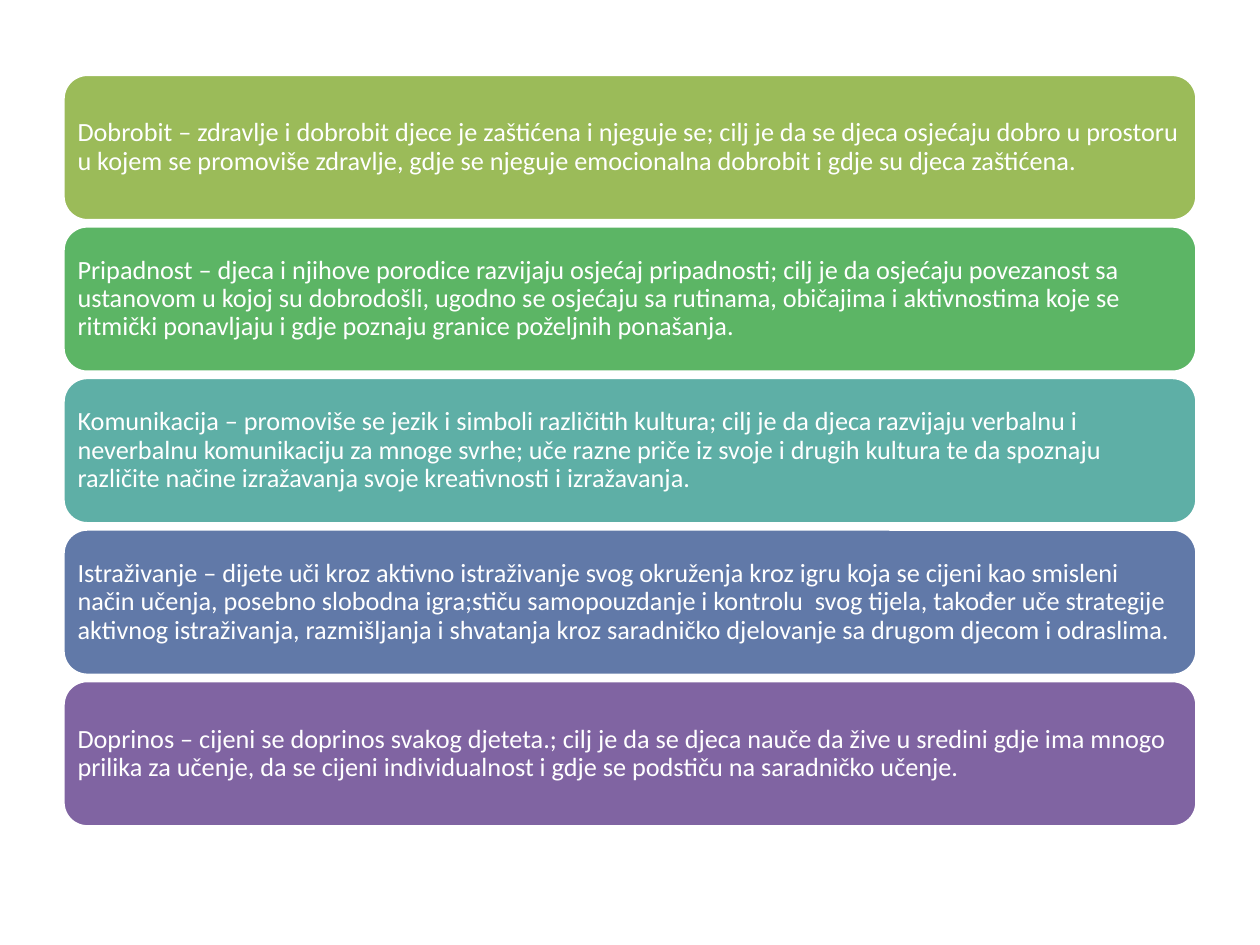
from pptx import Presentation
from pptx.dml.color import RGBColor
from pptx.enum.shapes import MSO_SHAPE as Shape
from pptx.enum.text import MSO_ANCHOR as Anchor, PP_ALIGN as Align
from pptx.util import Cm, Pt

COLORS = {
    "white": "FFFFFF",
    "olive": "9BBB59",
    "green": "5CB565",
    "teal": "5EAFA6",
    "blue": "6179A8",
    "purple": "8064A2",
}

GOALS = [
    ("olive", "Dobrobit – zdravlje i dobrobit djece je zaštićena i njeguje se; "
              "cilj je da se djeca osjećaju dobro u prostoru u kojem se promoviše "
              "zdravlje, gdje se njeguje emocionalna dobrobit i gdje su djeca zaštićena."),
    ("green", "Pripadnost – djeca i njihove porodice razvijaju osjećaj pripadnosti; "
              "cilj je da osjećaju povezanost sa ustanovom u kojoj su dobrodošli, "
              "ugodno se osjećaju sa rutinama, običajima i aktivnostima koje se "
              "ritmički ponavljaju i gdje poznaju granice poželjnih ponašanja."),
    ("teal", "Komunikacija – promoviše se jezik i simboli različitih kultura; "
             "cilj je da djeca razvijaju verbalnu i neverbalnu komunikaciju za mnoge "
             "svrhe; uče razne priče iz svoje i drugih kultura te da spoznaju "
             "različite načine izražavanja svoje kreativnosti i izražavanja."),
    ("blue", "Istraživanje – dijete uči kroz aktivno istraživanje svog okruženja kroz "
             "igru koja se cijeni kao smisleni način učenja, posebno slobodna "
             "igra;stiču samopouzdanje i kontrolu  svog tijela, također uče strategije "
             "aktivnog istraživanja, razmišljanja i shvatanja kroz saradničko "
             "djelovanje sa drugom djecom i odraslima."),
    ("purple", "Doprinos – cijeni se doprinos svakog djeteta.; cilj je da se djeca "
               "nauče da žive u sredini gdje ima mnogo prilika za učenje, da se cijeni "
               "individualnost i gdje se podstiču na saradničko učenje."),
]


def rgb(name):
    return RGBColor.from_string(COLORS[name])


def write_text(frame, text, *, size=15, color="white", font="Calibri",
               spacing=0.9, inset=0.15):
    frame.word_wrap = True
    frame.vertical_anchor = Anchor.MIDDLE
    frame.margin_left = frame.margin_right = Cm(inset)
    frame.margin_top = frame.margin_bottom = Cm(inset)
    paragraph = frame.paragraphs[0]
    paragraph.alignment = Align.LEFT
    paragraph.line_spacing = spacing
    run = paragraph.add_run()
    run.text = text
    run.font.name = font
    run.font.size = Pt(size)
    run.font.color.rgb = rgb(color)


def add_goal(slide, left, top, width, height, color, text):
    goal = slide.shapes.add_shape(Shape.ROUNDED_RECTANGLE, left, top, width, height)
    goal.shadow.inherit = False
    goal.fill.solid()
    goal.fill.fore_color.rgb = rgb(color)
    goal.line.color.rgb = rgb("white")
    goal.line.width = Pt(2)
    write_text(goal.text_frame, text)


def add_goal_list(slide, left, top, width, height, goals, goal_height):
    """Stack the goals in the given box with equal gaps between them."""
    pitch = (height - goal_height) / (len(goals) - 1)
    for row, (color, text) in enumerate(goals):
        add_goal(slide, left, round(top + row * pitch), width, goal_height, color, text)


def main():
    prs = Presentation()
    prs.slide_width, prs.slide_height = Cm(25.4), Cm(19.05)
    slide = prs.slides.add_slide(prs.slide_layouts[6])
    add_goal_list(slide, Cm(1.27), Cm(1.5), Cm(22.86), Cm(15.17), GOALS, Cm(2.95))
    prs.save("out.pptx")


if __name__ == "__main__":
    main()
